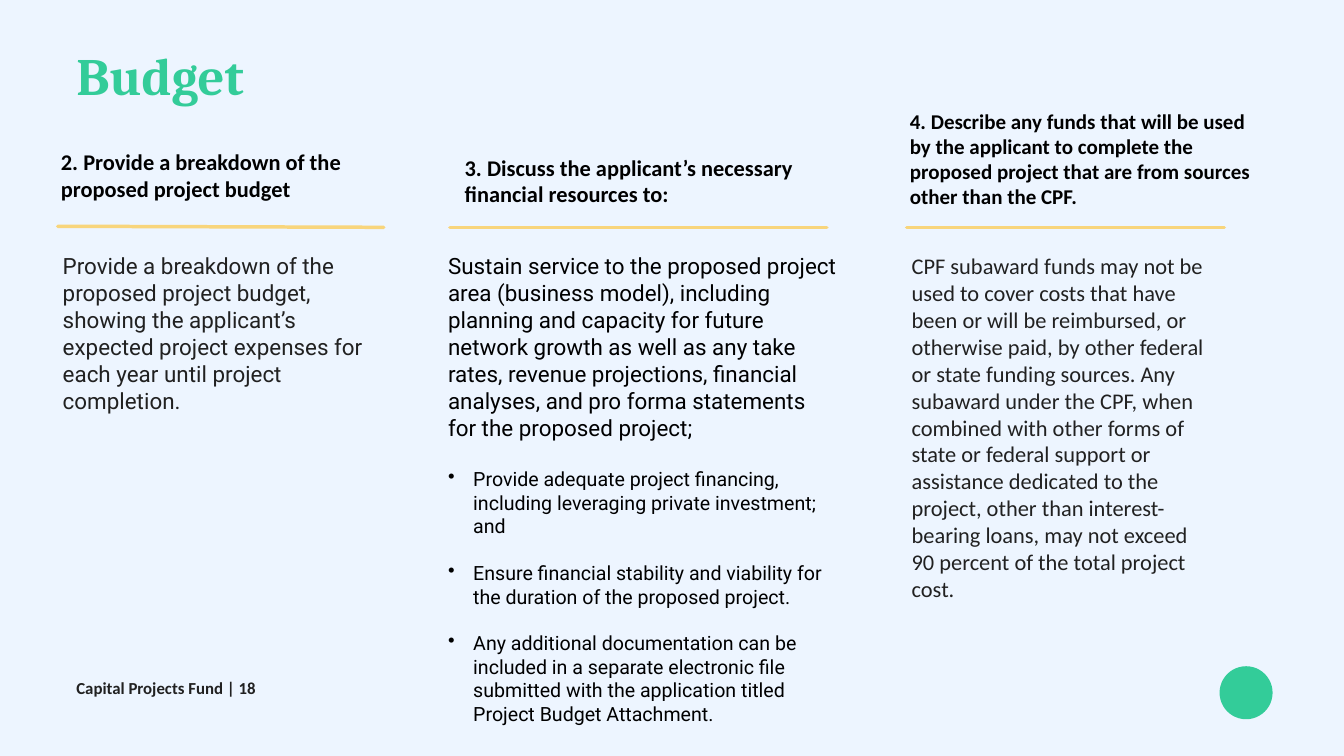
"""Build the Budget slide: three headed columns with rules, a title and a footer."""
from dataclasses import dataclass

from lxml import etree
from pptx import Presentation
from pptx.dml.color import RGBColor
from pptx.enum import shapes, text
from pptx.oxml.ns import qn
from pptx.util import Pt

PX = 9525
GREEN = RGBColor(0x33, 0xCC, 0x99)
YELLOW = RGBColor(0xF8, 0xD5, 0x7C)
PALE_BLUE = RGBColor(0xED, 0xF5, 0xFF)
BLACK = RGBColor(0x00, 0x00, 0x00)
CHARCOAL = RGBColor(0x21, 0x21, 0x21)

RULE_Y = 433
BODY_TOP = 476
BODY_HEIGHT = 750
BULLET_INDENT = 48


@dataclass(frozen=True)
class Box:
    left: int
    top: int
    width: int
    height: int


@dataclass(frozen=True)
class Style:
    font: str
    size: int
    color: RGBColor
    bold: bool = False
    line_spacing: float = 1.0


@dataclass(frozen=True)
class Paragraph:
    text: str
    style: Style
    space_before: int = 0
    bullet: bool = False


@dataclass(frozen=True)
class Column:
    heading: Paragraph
    heading_box: Box
    rule_left: int
    rule_right: int
    rule_left_y: int
    body_left: int
    body_width: int
    body: tuple[Paragraph, ...]


TITLE = Style("Cambria", 75, GREEN, True, 0.9)
FOOTER = Style("Calibri", 24, CHARCOAL, True, 0.9)
HEADING = Style("Calibri", 32, BLACK, True)
LONG_HEADING = Style("Calibri", 30, BLACK, True)
ROBOTO_GREY = Style("Roboto", 32, CHARCOAL)
ROBOTO_BLACK = Style("Roboto", 32, BLACK)
BULLET = Style("Roboto", 28, BLACK)
CALIBRI_GREY = Style("Calibri", 32, CHARCOAL)

COLUMNS = (
    Column(
        Paragraph("2. Provide a breakdown of the proposed project budget", HEADING),
        Box(110, 276, 581, 114), 110, 731, 431, 110, 595,
        (Paragraph("Provide a breakdown of the proposed project budget, showing the applicant’s "
                   "expected project expenses for each year until project completion.", ROBOTO_GREY),),
    ),
    Column(
        Paragraph("3. Discuss the applicant’s necessary financial resources to:", HEADING),
        Box(879, 287, 660, 114), 857, 1575, RULE_Y, 844, 760,
        (
            Paragraph("Sustain service to the proposed project area (business model), including "
                      "planning and capacity for future network growth as well as any take rates, "
                      "revenue projections, financial analyses, and pro forma statements for the "
                      "proposed project;", ROBOTO_BLACK),
            Paragraph("Provide adequate project financing, including leveraging private "
                      "investment; and", BULLET, 38, True),
            Paragraph("Ensure financial stability and viability for the duration of the "
                      "proposed project.", BULLET, 33, True),
            Paragraph("Any additional documentation can be included in a separate electronic file "
                      "submitted with the application titled Project Budget Attachment.",
                      BULLET, 33, True),
        ),
    ),
    Column(
        Paragraph("4. Describe any funds that will be used by the applicant to complete the "
                  "proposed project that are from sources other than the CPF.", LONG_HEADING),
        Box(1727, 200, 691, 204), 1727, 2332, RULE_Y, 1727, 588,
        (Paragraph("CPF subaward funds may not be used to cover costs that have been or will be "
                   "reimbursed, or otherwise paid, by other federal or state funding sources. Any "
                   "subaward under the CPF, when combined with other forms of state or federal "
                   "support or assistance dedicated to the project, other than interest-bearing "
                   "loans, may not exceed 90 percent of the total project cost.", CALIBRI_GREY),),
    ),
)


def add_text(slide, box: Box, paragraphs: tuple[Paragraph, ...], inset: int | None = None,
             anchor=text.MSO_ANCHOR.TOP) -> None:
    shape = slide.shapes.add_textbox(box.left * PX, box.top * PX, box.width * PX, box.height * PX)
    frame = shape.text_frame
    frame.word_wrap = True
    frame.vertical_anchor = anchor
    if inset is not None:
        frame.margin_left = frame.margin_right = inset * PX
        frame.margin_top = frame.margin_bottom = inset * PX
    for index, item in enumerate(paragraphs):
        paragraph = frame.add_paragraph() if index else frame.paragraphs[0]
        paragraph.text = item.text
        paragraph.line_spacing = item.style.line_spacing
        if index:
            paragraph.space_before = Pt(item.space_before)
        if item.bullet:
            properties = paragraph._p.get_or_add_pPr()
            properties.set("marL", str(BULLET_INDENT * PX))
            properties.set("indent", str(-BULLET_INDENT * PX))
            etree.SubElement(properties, qn("a:buChar")).set("char", "•")
        font = paragraph.font
        font.name = item.style.font
        font.size = Pt(item.style.size)
        font.bold = item.style.bold
        font.color.rgb = item.style.color


def add_rule(slide, left: int, left_y: int, right: int, right_y: int) -> None:
    rule = slide.shapes.add_connector(shapes.MSO_CONNECTOR.STRAIGHT,
                                      left * PX, left_y * PX, right * PX, right_y * PX)
    rule.line.color.rgb = YELLOW
    rule.line.width = Pt(5)
    properties = rule._element.spPr
    properties.find(qn("a:ln")).set("cap", "rnd")
    etree.SubElement(properties, qn("a:effectLst"))


def add_dot(slide, box: Box) -> None:
    dot = slide.shapes.add_shape(shapes.MSO_SHAPE.OVAL, box.left * PX, box.top * PX,
                                 box.width * PX, box.height * PX)
    dot.shadow.inherit = False
    dot.fill.solid()
    dot.fill.fore_color.rgb = GREEN
    dot.line.fill.background()


def add_column(slide, column: Column) -> None:
    add_text(slide, column.heading_box, (column.heading,), 6, text.MSO_ANCHOR.MIDDLE)
    add_rule(slide, column.rule_left, column.rule_left_y, column.rule_right, RULE_Y)
    add_text(slide, Box(column.body_left, BODY_TOP, column.body_width, BODY_HEIGHT), column.body)


def main() -> None:
    presentation = Presentation()
    presentation.slide_width = 2560 * PX
    presentation.slide_height = 1440 * PX
    slide = presentation.slides.add_slide(presentation.slide_layouts[6])
    slide.background.fill.solid()
    slide.background.fill.fore_color.rgb = PALE_BLUE
    add_dot(slide, Box(2323, 1269, 101, 101))
    add_text(slide, Box(136, 90, 2281, 120), (Paragraph("Budget", TITLE),))
    for column in COLUMNS:
        add_column(slide, column)
    add_text(slide, Box(136, 1291, 1841, 46), (Paragraph("Capital Projects Fund | 18", FOOTER),))
    presentation.save("out.pptx")


if __name__ == "__main__":
    main()
